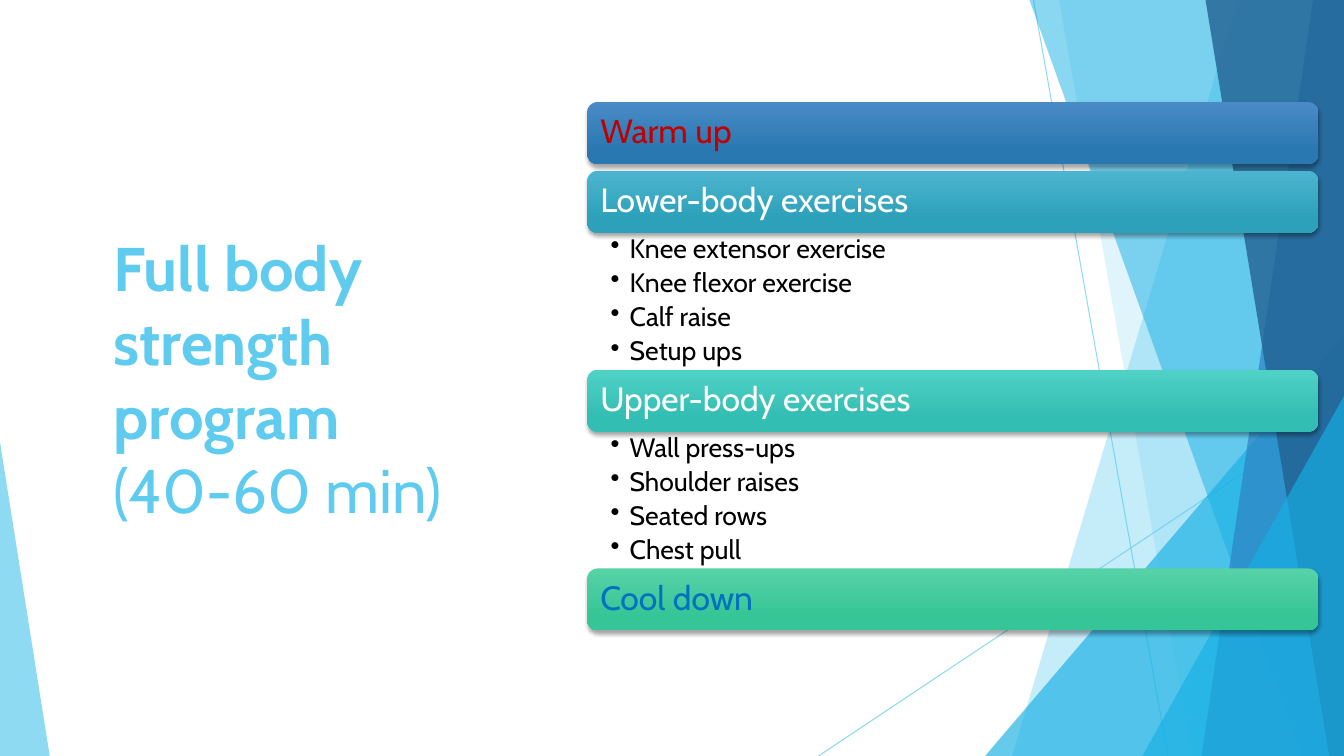
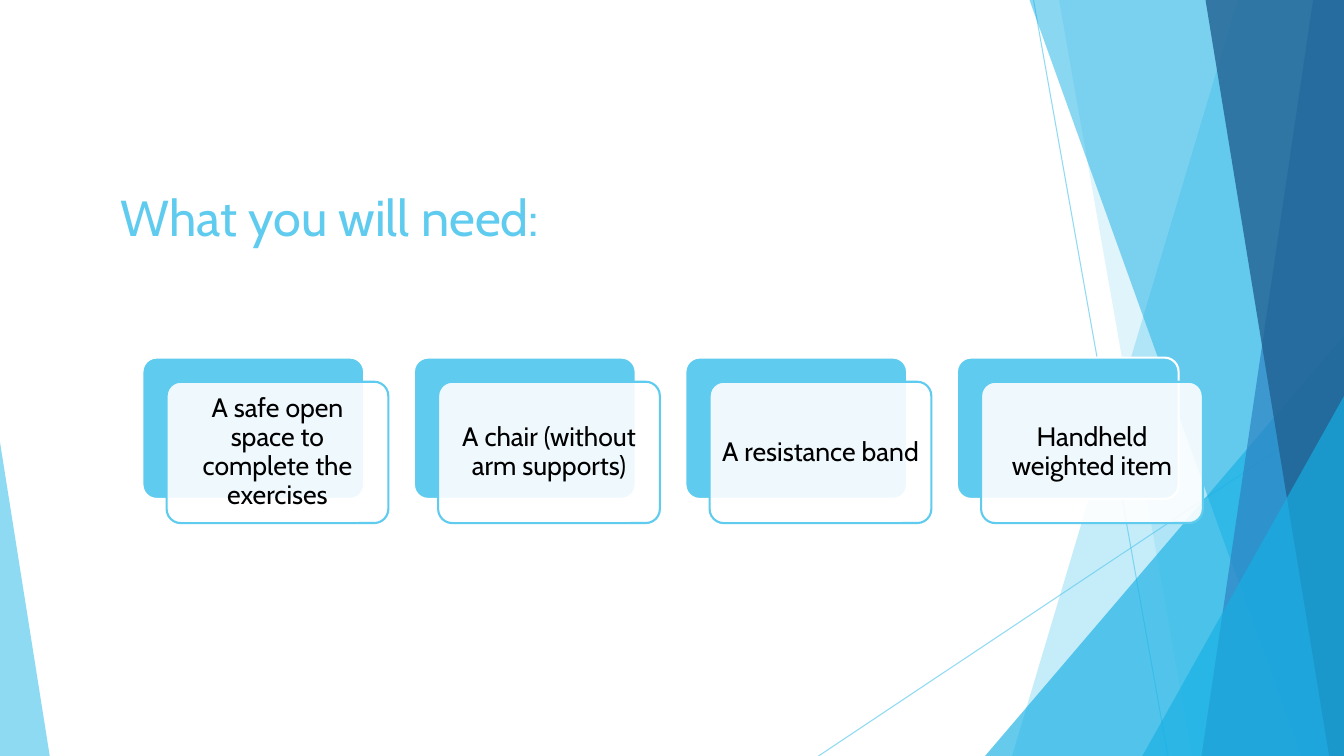
from lxml.etree import SubElement
from pptx import Presentation
from pptx.dml.color import RGBColor
from pptx.enum.shapes import MSO_CONNECTOR, MSO_SHAPE as Preset
from pptx.enum.text import MSO_ANCHOR as Anchor, PP_ALIGN as Align
from pptx.oxml.ns import qn
from pptx.util import Inches, Pt

FONT = "Cabin"
SKY, CYAN, BLUE, NAVY = "5FCBEF", "17B0E4", "2E83C3", "226292"
WHITE, BLACK = "FFFFFF", "000000"

presentation = Presentation()
presentation.slide_width = 12192000
presentation.slide_height = 6858000

# The grid: 1000 columns by 1000 rows
COLUMN = presentation.slide_width // 1000
ROW = presentation.slide_height // 1000
RIGHT, BOTTOM = 1000 * COLUMN, 1000 * ROW


def paint(shape, fill=None, line=None, width=0.75, opacity=100, shadow=False):
    """Colour a shape or connector; a pair of fills makes a vertical gradient.

    Opacity applies to the fill, or to the line where there is no fill.
    """
    if isinstance(fill, tuple):
        shape.fill.gradient()
        shape.fill.gradient_angle = 270
        for stop, colour, position in zip(shape.fill.gradient_stops, fill, (0, 0.78)):
            stop.color.rgb = RGBColor.from_string(colour)
            stop.position = position
    elif fill:
        shape.fill.solid()
        shape.fill.fore_color.rgb = RGBColor.from_string(fill)
    if line:
        shape.line.color.rgb = RGBColor.from_string(line)
        shape.line.width = Pt(width)
    else:
        shape.line.fill.background()
    properties = shape._element.spPr
    if opacity < 100:
        colour = next(properties.iter(qn("a:srgbClr")))
        SubElement(colour, qn("a:alpha"), val=str(opacity * 1000))
    effects = SubElement(properties, qn("a:effectLst"))
    if shadow:
        outer = SubElement(effects, qn("a:outerShdw"), blurRad=str(Pt(3)),
                           dist=str(Pt(2)), dir="5400000", rotWithShape="0")
        colour = SubElement(outer, qn("a:srgbClr"), val=BLACK)
        SubElement(colour, qn("a:alpha"), val="35000")


def write(shape, *lines, size, colour=BLACK, bold=False, align=Align.LEFT,
          anchor=Anchor.MIDDLE, margins=(0.1, 0.05, 0.1, 0.05),
          spacing=None, after=0, bullet_indent=0):
    """Write one paragraph per line; margins run left, top, right, bottom."""
    frame = shape.text_frame
    frame.word_wrap = True
    frame.vertical_anchor = anchor
    (frame.margin_left, frame.margin_top,
     frame.margin_right, frame.margin_bottom) = map(Inches, margins)
    for index, text in enumerate(lines):
        paragraph = frame.add_paragraph() if index else frame.paragraphs[0]
        paragraph.alignment = align
        paragraph.line_spacing = spacing
        paragraph.space_after = Pt(after)
        if bullet_indent:
            properties = paragraph._p.get_or_add_pPr()
            properties.set("marL", str(Inches(bullet_indent)))
            properties.set("indent", str(-Inches(bullet_indent)))
            SubElement(properties, qn("a:buChar"), char="•")
        run = paragraph.add_run()
        run.text = text
        run.font.name, run.font.size, run.font.bold = FONT, Pt(size), bold
        run.font.color.rgb = RGBColor.from_string(colour)
    return frame


# Backdrop shared by all slides
THIN_LINES = [(769, 0, 869, 1000), (1000, 537, 609, 1000)]
# Bands: left edge at the top and at the bottom; they reach the right edge.
# Triangles: left, top, width and apex; they stand on the bottom edge.
FACETS = [
    ((921, 753), SKY, 36),
    ((788, 887), SKY, 20),
    ((733, 444, 267, 1), CYAN, 66),
    ((766, 968), CYAN, 50),
    ((977, 894), BLUE, 70),
    ((897, 989), NAVY, 80),
    ((850, 524, 150, 1), CYAN, 66),
    ((0, 585, 37, 0), SKY, 70),
]

slides = []
for _ in range(2):
    slide = presentation.slides.add_slide(presentation.slide_layouts[6])
    slides.append(slide)
    for x1, y1, x2, y2 in THIN_LINES:
        thin_line = slide.shapes.add_connector(
            MSO_CONNECTOR.STRAIGHT, x1 * COLUMN, y1 * ROW, x2 * COLUMN, y2 * ROW)
        paint(thin_line, line=SKY, opacity=70)
    for outline, colour, opacity in FACETS:
        if len(outline) == 2:
            top_left, bottom_left = outline
            builder = slide.shapes.build_freeform(top_left * COLUMN, 0)
            builder.add_line_segments(
                [(RIGHT, 0), (RIGHT, BOTTOM), (bottom_left * COLUMN, BOTTOM)])
            facet = builder.convert_to_shape()
        else:
            left, top, width, apex = outline
            facet = slide.shapes.add_shape(
                Preset.ISOSCELES_TRIANGLE, left * COLUMN, top * ROW,
                width * COLUMN, (1000 - top) * ROW)
            facet.adjustments[0] = apex
        paint(facet, fill=colour, opacity=opacity)

program_slide, equipment_slide = slides

# Slide 1: the program
title = program_slide.shapes.add_textbox(77 * COLUMN, 201 * ROW, 315 * COLUMN, 597 * ROW)
title_frame = write(title, "Full body strength program", "(40-60 min)",
                    size=44, colour=SKY, bold=True)
title_frame.paragraphs[1].runs[0].font.bold = False

PHASES = [
    ("Warm up", "C00000", ("4A8BC6", "2A78B2"), []),
    ("Lower-body exercises", WHITE, ("4CB4CE", "2DA1BA"),
     ["Knee extensor exercise", "Knee flexor exercise", "Calf raise", "Setup ups"]),
    ("Upper-body exercises", WHITE, ("50D1C6", "33BEB3"),
     ["Wall press-ups", "Shoulder raises", "Seated rows", "Chest pull"]),
    ("Cool down", "0070C0", ("56D2A7", "36C596"), []),
]
BAR_LEFT, BAR_WIDTH = 437 * COLUMN, 544 * COLUMN
BAR_HEIGHT, BAR_GAP, LIST_HEIGHT = 82 * ROW, 9 * ROW, 181 * ROW

top = 135 * ROW
for heading, colour, gradient, exercises in PHASES:
    bar = program_slide.shapes.add_shape(
        Preset.ROUNDED_RECTANGLE, BAR_LEFT, top, BAR_WIDTH, BAR_HEIGHT)
    paint(bar, fill=gradient, shadow=True)
    write(bar, heading, size=24, colour=colour, margins=(0.1,) * 4, spacing=0.9)
    top += BAR_HEIGHT
    if exercises:
        exercise_list = program_slide.shapes.add_textbox(
            BAR_LEFT, top, BAR_WIDTH, LIST_HEIGHT)
        write(exercise_list, *exercises, size=19, anchor=Anchor.TOP,
              margins=(0.23, 0.03, 0.19, 0.03), spacing=0.9, after=3.8,
              bullet_indent=0.19)
        top += LIST_HEIGHT
    else:
        top += BAR_GAP

# Slide 2: the equipment
title = equipment_slide.shapes.add_textbox(82 * COLUMN, 239 * ROW, 836 * COLUMN, 160 * ROW)
write(title, "What you will need:", size=36, colour=SKY, anchor=Anchor.TOP)

ITEMS = [
    "A safe open space to complete the exercises",
    "A chair (without arm supports)",
    "A resistance band",
    "Handheld weighted item",
]
CARD_WIDTH, CARD_HEIGHT, CARD_PITCH = 165 * COLUMN, 187 * ROW, 202 * COLUMN

for index, item in enumerate(ITEMS):
    left, top = 106 * COLUMN + index * CARD_PITCH, 473 * ROW
    for fill, line, opacity in [(SKY, WHITE, 100), (WHITE, SKY, 90)]:
        card = equipment_slide.shapes.add_shape(
            Preset.ROUNDED_RECTANGLE, left, top, CARD_WIDTH, CARD_HEIGHT)
        card.adjustments[0] = 0.1
        paint(card, fill=fill, line=line, width=1.5, opacity=opacity)
        left, top = left + 18 * COLUMN, top + 32 * ROW
    write(card, item, size=19, align=Align.CENTER, margins=(0.08,) * 4, spacing=0.9)

presentation.save("out.pptx")
